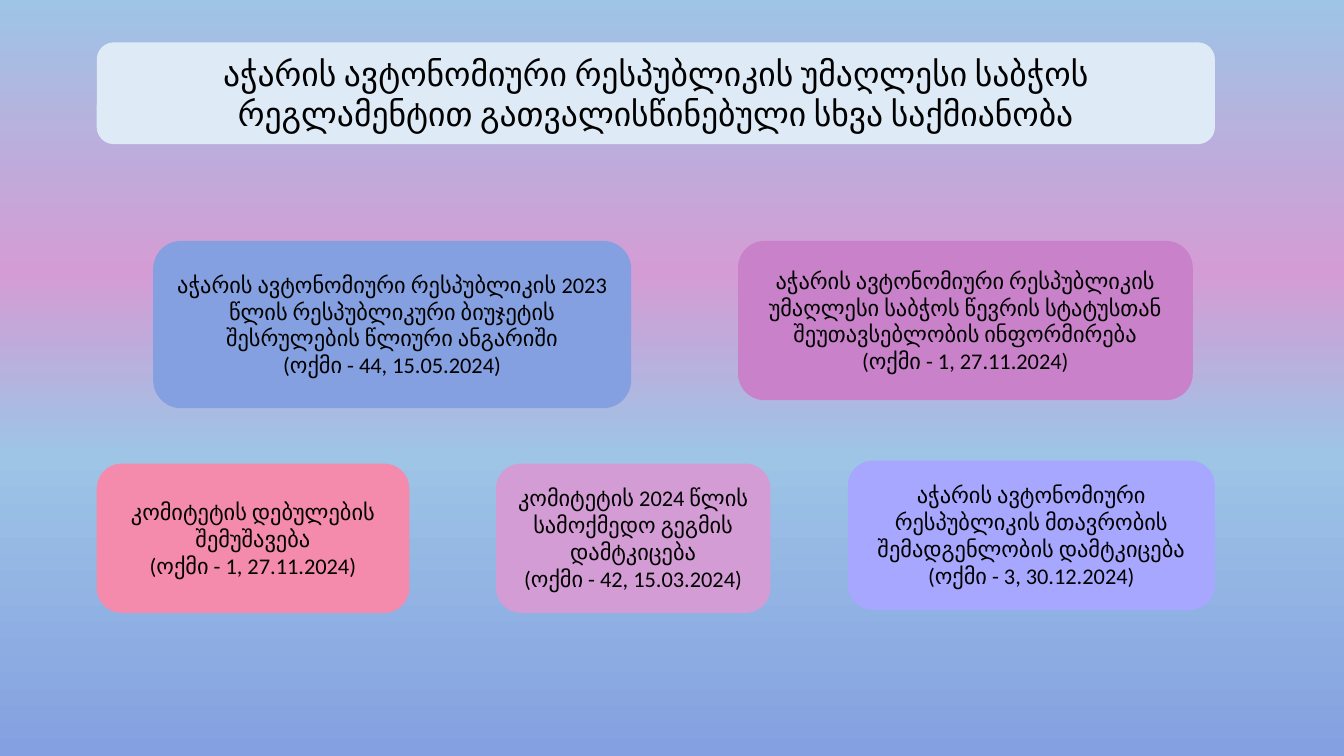
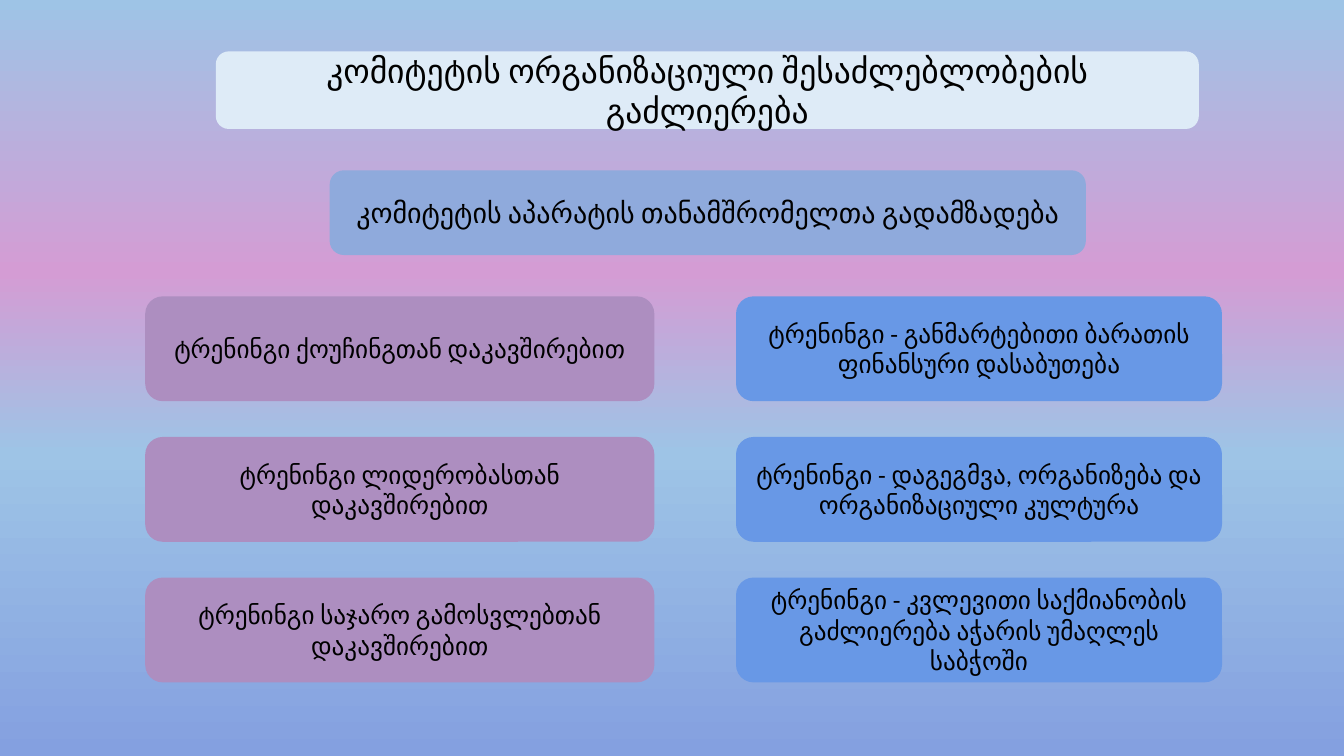
import copy

import pptx
import pptx.dml.color
import pptx.enum.shapes
import pptx.enum.text
import pptx.util

Inches = pptx.util.Inches

FONT = "Calibri"
BLACK = "000000"
BAND = "DEEBF7"
SKY = [(0, "9EC4E6"), (0.36, "D49CD4"), (0.6, "9EC4E6"), (1, "84A0E0")]

WORK = {
    "title": "აჭარის ავტონომიური რესპუბლიკის უმაღლესი საბჭოს "
             "რეგლამენტით გათვალისწინებული სხვა საქმიანობა",
    "box": (0.96, 0.42, 11.09, 1.01),
    "cards": [
        ((1.52, 2.39, 4.74, 1.66), "84A0E0",
         ["აჭარის ავტონომიური რესპუბლიკის 2023 წლის რესპუბლიკური ბიუჯეტის "
          "შესრულების წლიური ანგარიში", "(ოქმი - 44, 15.05.2024)"]),
        ((7.32, 2.39, 4.51, 1.58), "C981C9",
         ["აჭარის ავტონომიური რესპუბლიკის უმაღლესი საბჭოს წევრის სტატუსთან "
          "შეუთავსებლობის ინფორმირება", "(ოქმი - 1, 27.11.2024)"]),
        ((0.96, 4.6, 3.1, 1.48), "F58BAC",
         ["კომიტეტის დებულების შემუშავება", "(ოქმი - 1, 27.11.2024)"]),
        ((4.92, 4.6, 2.72, 1.48), "D49CD4",
         ["კომიტეტის 2024 წლის სამოქმედო გეგმის დამტკიცება",
          "(ოქმი - 42, 15.03.2024)"]),
        ((8.41, 4.57, 3.64, 1.48), "A7A7FF",
         ["აჭარის ავტონომიური რესპუბლიკის მთავრობის შემადგენლობის დამტკიცება",
          "(ოქმი - 3, 30.12.2024)"]),
    ],
}

SKILLS = {
    "title": "კომიტეტის ორგანიზაციული შესაძლებლობების გაძლიერება",
    "box": (2.14, 0.51, 9.75, 0.77),
    "lead": ((3.27, 1.69, 7.5, 0.84), "8FAADC",
             ["კომიტეტის აპარატის თანამშრომელთა გადამზადება"]),
    "columns": [
        (1.44, 5.05, "AD8EC0", [
            "ტრენინგი ქოუჩინგთან დაკავშირებით",
            "ტრენინგი ლიდერობასთან დაკავშირებით",
            "ტრენინგი საჯარო გამოსვლებთან დაკავშირებით"]),
        (7.3, 4.82, "6898E6", [
            "ტრენინგი - განმარტებითი ბარათის ფინანსური დასაბუთება",
            "ტრენინგი - დაგეგმვა, ორგანიზება და ორგანიზაციული კულტურა",
            "ტრენინგი - კვლევითი საქმიანობის გაძლიერება აჭარის უმაღლეს "
            "საბჭოში"]),
    ],
}
ROW_TOP, ROW_LAST, ROW_HIGH = 2.94, 5.73, 1.04


def rgb(code):
    return pptx.dml.color.RGBColor.from_string(code)


def paint_sky(master):
    """Give the master the vertical gradient that every slide inherits."""
    fill = master.background.fill
    fill.gradient()
    fill.gradient_angle = 270
    stops = master.element.xpath("./p:cSld/p:bg//a:gs")
    for _ in range(len(SKY) - len(stops)):
        stops[-1].addnext(copy.deepcopy(stops[-1]))
    for stop, (spot, code) in zip(fill.gradient_stops, SKY):
        stop.position = spot
        stop.color.rgb = rgb(code)


def write(shape, lines, size):
    """Set centred text, one paragraph per line."""
    frame = shape.text_frame
    frame.text = "\n".join(lines)
    frame.word_wrap = True
    frame.auto_size = pptx.enum.text.MSO_AUTO_SIZE.NONE
    frame.vertical_anchor = pptx.enum.text.MSO_ANCHOR.MIDDLE
    for para in frame.paragraphs:
        para.alignment = pptx.enum.text.PP_ALIGN.CENTER
        for run in para.runs:
            run.font.name = FONT
            run.font.size = pptx.util.Pt(size)
            run.font.color.rgb = rgb(BLACK)


def add_panel(slide, box, code):
    shape = slide.shapes.add_shape(
        pptx.enum.shapes.MSO_SHAPE.ROUNDED_RECTANGLE, *map(Inches, box))
    shape.shadow.inherit = False
    shape.fill.solid()
    shape.fill.fore_color.rgb = rgb(code)
    shape.line.fill.background()
    return shape


def add_card(slide, box, code, lines, size):
    write(add_panel(slide, box, code), lines, size)


def add_slide(deck, data):
    """Add a slide whose title sits on a pale rounded band."""
    slide = deck.slides.add_slide(deck.slide_layouts.get_by_name("Title Only"))
    band = add_panel(slide, data["box"], BAND)
    title = slide.shapes.title
    title.left, title.top, title.width, title.height = map(Inches, data["box"])
    write(title, [data["title"]], 24)
    title.text_frame.margin_left = Inches(0.15)
    title.text_frame.margin_right = Inches(0.15)
    band.element.addnext(title.element)
    return slide


def main():
    deck = pptx.Presentation()
    deck.slide_width, deck.slide_height = Inches(13.33), Inches(7.5)
    paint_sky(deck.slide_master)

    slide = add_slide(deck, WORK)
    for box, code, lines in WORK["cards"]:
        add_card(slide, box, code, lines, 16)

    slide = add_slide(deck, SKILLS)
    add_card(slide, *SKILLS["lead"], 20)
    for left, width, code, items in SKILLS["columns"]:
        pitch = (ROW_LAST - ROW_TOP) / (len(items) - 1)
        for row, item in enumerate(items):
            box = (left, ROW_TOP + row * pitch, width, ROW_HIGH)
            add_card(slide, box, code, [item], 18)

    deck.save("out.pptx")


if __name__ == "__main__":
    main()
